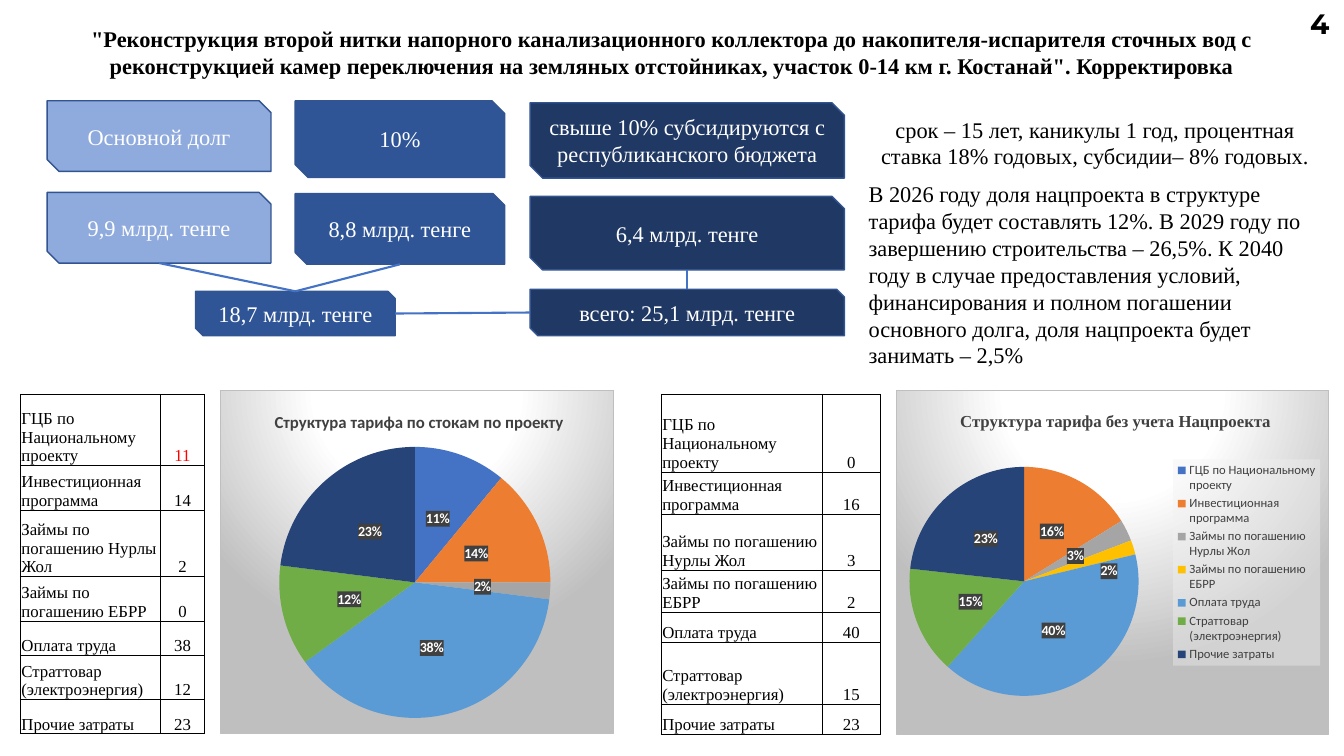
from lxml.etree import SubElement
from pptx import Presentation
from pptx.chart.data import CategoryChartData
from pptx.dml.color import RGBColor
from pptx.enum.chart import XL_CHART_TYPE, XL_LEGEND_POSITION
from pptx.enum.shapes import MSO_CONNECTOR, MSO_SHAPE
from pptx.enum.text import MSO_ANCHOR, PP_ALIGN
from pptx.oxml import parse_xml
from pptx.oxml.ns import nsdecls, qn
from pptx.util import Cm, Pt

COLORS = {
    "black": "000000", "white": "FFFFFF", "red": "FF0000", "dark": "404040",
    "light_blue": "8FAADC", "blue": "2F5597", "navy": "203864",
    "outline": "325491", "connector": "4472C4", "silver": "BFBFBF", "legend": "F2F2F2",
}
SLICE_COLORS = ["4472C4", "ED7D31", "A5A5A5", "FFC000", "5B9BD5", "70AD47", "264478"]
SERIF = "Times New Roman"
SANS = "Calibri"
TOP, LEFT, BOTTOM, RIGHT = range(4)
TARIFF_ITEMS = [
    "ГЦБ по Национальному проекту", "Инвестиционная программа",
    "Займы по погашению Нурлы Жол", "Займы по погашению ЕБРР",
    "Оплата труда", "Страттовар (электроэнергия)", "Прочие затраты",
]
WITH_PROJECT = [11, 14, 2, 0, 38, 12, 23]
WITHOUT_PROJECT = [0, 16, 3, 2, 40, 15, 23]


def rgb(name):
    return RGBColor.from_string(COLORS[name])


def style_font(font, size, color="black", name=SERIF, bold=False):
    font.size = Pt(size)
    font.name = name
    font.bold = bold
    font.color.rgb = rgb(color)


def write(frame, text, size, color="black", align=PP_ALIGN.LEFT, name=SERIF, bold=False):
    paragraph = frame.paragraphs[0]
    paragraph.text = text
    paragraph.alignment = align
    style_font(paragraph.font, size, color, name, bold)


def add_text(slide, box, text, size=16, **style):
    shape = slide.shapes.add_textbox(*map(Cm, box))
    shape.text_frame.word_wrap = True
    write(shape.text_frame, text, size, **style)
    return shape


def add_box(slide, box, text, color):
    shape = slide.shapes.add_shape(MSO_SHAPE.SNIP_2_DIAG_RECTANGLE, *map(Cm, box))
    shape.shadow.inherit = False
    shape.fill.solid()
    shape.fill.fore_color.rgb = rgb(color)
    shape.line.color.rgb = rgb("outline")
    shape.line.width = Pt(1)
    shape.text_frame.vertical_anchor = MSO_ANCHOR.MIDDLE
    write(shape.text_frame, text, 16, "white", PP_ALIGN.CENTER)
    return shape


def join(slide, start, start_side, end, end_side):
    connector = slide.shapes.add_connector(MSO_CONNECTOR.STRAIGHT, 0, 0, 0, 0)
    connector.begin_connect(start, start_side)
    connector.end_connect(end, end_side)
    links = connector._element.nvCxnSpPr.cNvCxnSpPr
    links.stCxn.idx = 3 - start_side
    links.endCxn.idx = 3 - end_side
    connector.line.color.rgb = rgb("connector")
    connector.line.width = Pt(1.5)
    SubElement(connector._element.spPr, qn("a:effectLst"))


def border_cell(cell):
    properties = cell._tc.get_or_add_tcPr()
    for side in "LRTB":
        properties.append(parse_xml(
            f'<a:ln{side} {nsdecls("a")} w="6350"><a:solidFill>'
            f'<a:srgbClr val="{COLORS["black"]}"/></a:solidFill></a:ln{side}>'))
    cell.fill.background()


def add_tariff_table(slide, left, widths, heights, values, highlighted=None):
    shape = slide.shapes.add_table(
        len(values), 2, Cm(left), Cm(9.93), Cm(sum(widths)), Cm(sum(heights)))
    table = shape.table
    table.first_row = table.horz_banding = False
    for column, width in zip(table.columns, widths):
        column.width = Cm(width)
    for index, (item, value) in enumerate(zip(TARIFF_ITEMS, values)):
        table.rows[index].height = Cm(heights[index])
        value_color = "red" if index == highlighted else "black"
        entries = [(item, "black", PP_ALIGN.LEFT), (str(value), value_color, PP_ALIGN.CENTER)]
        for cell, (text, color, align) in zip(table.rows[index].cells, entries):
            cell.margin_left = cell.margin_right = cell.margin_top = Cm(0.03)
            cell.margin_bottom = 0
            cell.vertical_anchor = MSO_ANCHOR.BOTTOM
            write(cell.text_frame, text, 12, color, align)
            border_cell(cell)


def place(element, index, layout):
    for previous in element.findall(qn("c:layout")):
        element.remove(previous)
    modes = "".join(f'<c:{axis}Mode val="edge"/>' for axis in "xy")
    values = "".join(f'<c:{key} val="{value}"/>' for key, value in zip("xywh", layout))
    target = '<c:layoutTarget val="inner"/>' if index == 0 else ""
    element.insert(index, parse_xml(
        f'<c:layout {nsdecls("c")}><c:manualLayout>{target}{modes}{values}'
        '</c:manualLayout></c:layout>'))


def filled(color, alpha):
    return (f'<c:spPr {nsdecls("c", "a")}><a:solidFill><a:srgbClr val="{COLORS[color]}">'
            f'<a:alpha val="{alpha}000"/></a:srgbClr></a:solidFill></c:spPr>')


def label_slices(series, values, shifted):
    style = filled("dark", 90) + (
        '<c:txPr><a:bodyPr/><a:p><a:pPr><a:defRPr sz="1000" b="1"><a:solidFill>'
        f'<a:srgbClr val="{COLORS["white"]}"/></a:solidFill><a:latin typeface="{SANS}"/>'
        '</a:defRPr></a:pPr><a:endParaRPr lang="ru-RU"/></a:p></c:txPr><c:dLblPos val="ctr"/>')
    shows = "".join(
        f'<c:show{part} val="{int(part == "Percent")}"/>'
        for part in ("LegendKey", "Val", "CatName", "SerName", "Percent", "BubbleSize"))
    common = '<c:numFmt formatCode="0%" sourceLinked="0"/>' + style + shows
    special = ""
    for index, value in enumerate(values):
        if value == 0:
            special += f'<c:dLbl><c:idx val="{index}"/><c:delete val="1"/></c:dLbl>'
        elif index in shifted:
            x, y = shifted[index]
            special += (f'<c:dLbl><c:idx val="{index}"/><c:layout><c:manualLayout>'
                        f'<c:x val="{x}"/><c:y val="{y}"/></c:manualLayout></c:layout>'
                        f'{common}</c:dLbl>')
    labels = parse_xml(f'<c:dLbls {nsdecls("c", "a")}>{special}{common}'
                       '<c:showLeaderLines val="0"/></c:dLbls>')
    series._element.find(qn("c:cat")).addprevious(labels)


def shade_chart(chart):
    stops = "".join(
        f'<a:gs pos="{position}000"><a:srgbClr val="{COLORS[color]}"/></a:gs>'
        for position, color in ((0, "white"), (39, "white"), (100, "silver")))
    chart._chartSpace.chart.addnext(parse_xml(
        f'<c:spPr {nsdecls("c", "a")}><a:gradFill><a:gsLst>{stops}</a:gsLst>'
        '<a:path path="circle"><a:fillToRect l="50000" t="-80000" r="50000" b="180000"/>'
        '</a:path></a:gradFill><a:ln w="9525"><a:solidFill>'
        f'<a:srgbClr val="{COLORS["silver"]}"/></a:solidFill></a:ln></c:spPr>'))


def add_legend(chart, layout):
    chart.has_legend = True
    legend = chart.legend
    legend.position = XL_LEGEND_POSITION.RIGHT
    legend.include_in_layout = False
    style_font(legend.font, 9, "dark", SANS)
    legend._element.find(qn("c:txPr")).addprevious(parse_xml(filled("legend", 39)))
    place(legend._element, 1, layout)


def add_pie(slide, box, title, title_font, title_place, pie_place, categories, values, shifted):
    data = CategoryChartData()
    data.categories = categories
    data.add_series("Series 1", values)
    chart = slide.shapes.add_chart(XL_CHART_TYPE.PIE, *map(Cm, box), data).chart
    style_font(chart.font, 10, name=SANS)
    chart.has_legend = False
    chart.has_title = True
    write(chart.chart_title.text_frame, title, 12, "dark", PP_ALIGN.CENTER, title_font, True)
    place(chart.chart_title._element, 1, title_place)
    place(chart._chartSpace.chart.plotArea, 0, pie_place)
    plot = chart.plots[0]
    plot.vary_by_categories = True
    series = plot.series[0]
    for index, color in enumerate(SLICE_COLORS):
        slice_format = series.points[index].format
        slice_format.fill.solid()
        slice_format.fill.fore_color.rgb = RGBColor.from_string(color)
        slice_format.line.fill.background()
    label_slices(series, values, shifted)
    shade_chart(chart)
    return chart


def add_debt_scheme(slide):
    add_box(slide, (1.19, 2.54, 5.64, 1.78), "Основной долг", "light_blue")
    add_box(slide, (7.44, 2.54, 5.28, 1.93), "10%", "blue")
    add_box(slide, (13.36, 2.59, 7.92, 1.9),
            "свыше 10% субсидируются с республиканского бюджета", "navy")
    debt = add_box(slide, (1.19, 4.85, 5.64, 1.78), "9,9 млрд. тенге", "light_blue")
    interest = add_box(slide, (7.44, 4.88, 5.28, 1.78), "8,8 млрд. тенге", "blue")
    subsidy = add_box(slide, (13.36, 4.95, 7.92, 1.85), "6,4 млрд. тенге", "navy")
    total = add_box(slide, (13.36, 7.29, 7.92, 1.17), "всего: 25,1 млрд. тенге", "navy")
    subtotal = add_box(slide, (4.93, 7.34, 5.03, 1.12), "18,7 млрд. тенге", "blue")
    join(slide, debt, BOTTOM, subtotal, TOP)
    join(slide, interest, BOTTOM, subtotal, TOP)
    join(slide, subtotal, RIGHT, total, LEFT)
    join(slide, subsidy, BOTTOM, total, TOP)


def main():
    presentation = Presentation()
    presentation.slide_width, presentation.slide_height = Cm(33.87), Cm(19.05)
    slide = presentation.slides.add_slide(presentation.slide_layouts[6])
    add_text(slide, (1.19, 0.51, 31.47, 1.63),
             '"Реконструкция второй нитки напорного канализационного коллектора до '
             'накопителя-испарителя сточных вод с реконструкцией камер переключения на земляных '
             'отстойниках, участок 0-14 км г. Костанай". Корректировка',
             align=PP_ALIGN.CENTER, bold=True)
    add_debt_scheme(slide)
    add_text(slide, (21.64, 2.79, 11.91, 1.63),
             "срок – 15 лет, каникулы 1 год, процентная ставка 18% годовых, "
             "субсидии– 8% годовых.", align=PP_ALIGN.CENTER)
    add_text(slide, (21.64, 4.42, 11.63, 5.05),
             "В 2026 году доля нацпроекта в структуре тарифа будет составлять 12%. В 2029 году по "
             "завершению строительства – 26,5%. К 2040 году в случае предоставления условий, "
             "финансирования и полном погашении основного долга, доля нацпроекта будет "
             "занимать – 2,5%")
    number = add_text(slide, (33.02, 0.38, 0.48, 0.43), "4", 20, name="Montserrat", bold=True)
    frame = number.text_frame
    frame.margin_left = frame.margin_right = frame.margin_top = frame.margin_bottom = 0
    frame.vertical_anchor = MSO_ANCHOR.MIDDLE
    add_pie(slide, (5.54, 9.83, 9.93, 8.66), "Структура тарифа по стокам по проекту", SANS,
            (0.13, 0.05), (0.15, 0.16, 0.69, 0.8), list("1234567"), WITH_PROJECT, {})
    chart = add_pie(slide, (22.58, 9.83, 10.92, 8.69), "Структура тарифа без учета Нацпроекта",
                    SERIF, (0.14, 0.05), (0.03, 0.22, 0.53, 0.67), TARIFF_ITEMS,
                    WITHOUT_PROJECT, {3: (0.07, 0.02)})
    add_legend(chart, (0.64, 0.2, 0.34, 0.6))
    add_tariff_table(slide, 16.66, (4.06, 1.47), (1.96, 1.07, 1.4, 1.07, 0.76, 1.55, 0.76),
                     WITHOUT_PROJECT)
    add_tariff_table(slide, 0.51, (3.53, 1.12), (1.8, 1.12, 1.68, 1.12, 0.86, 1.12, 0.86),
                     WITH_PROJECT, highlighted=0)
    presentation.save("out.pptx")


if __name__ == "__main__":
    main()
